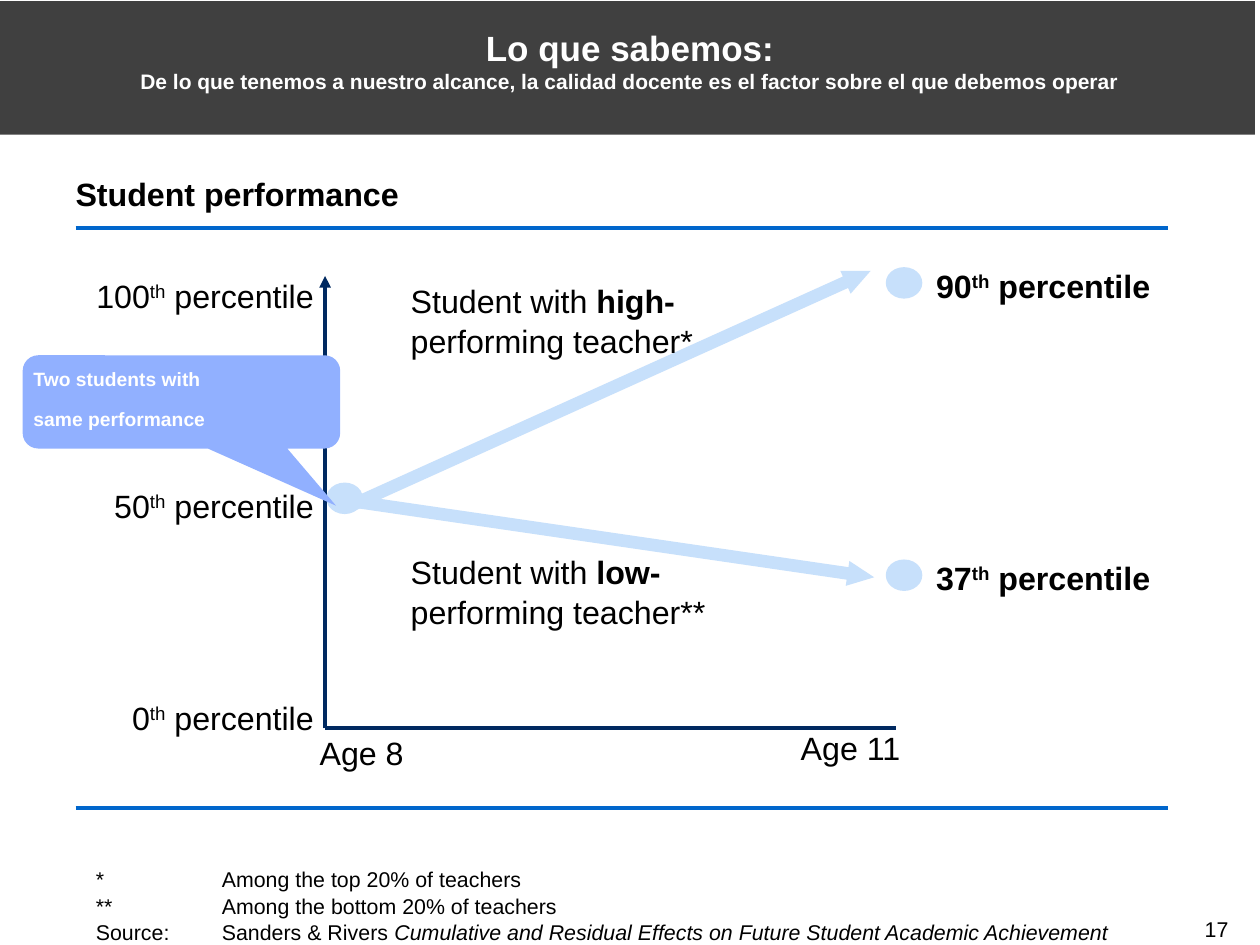
from dataclasses import dataclass

from lxml.etree import SubElement
from pptx import Presentation
from pptx.dml.color import RGBColor as RGB
from pptx.enum.shapes import MSO_CONNECTOR as CONN, MSO_SHAPE as SHAPE
from pptx.enum.text import MSO_ANCHOR as ANCHOR, MSO_AUTO_SIZE as AUTO, PP_ALIGN as ALIGN
from pptx.oxml.ns import qn
from pptx.util import Inches, Pt


@dataclass(frozen=True)
class Theme:
    font: str = "Arial"
    text: str = "000000"
    light: str = "FFFFFF"
    band: str = "404040"
    rule: str = "0066CC"
    axis: str = "002960"
    path_fill: str = "C7E0FB"
    callout: str = "91B0FF"
    title: float = 20
    subtitle: float = 12
    body: float = 18.4
    note: float = 12.2
    small: float = 11
    line: float = 2.25


@dataclass(frozen=True)
class Outcome:
    """One student's path: arrow, caption, end dot and final percentile."""
    arrow: tuple
    angle: float
    head: float
    level: str
    mark: str
    caption_y: float
    dot_y: float
    rank: str


T = Theme()
BOLD = {"bold": True}
DOT_X, DOT_W, DOT_H = 7.03, 0.29, 0.25
AXIS_X, AXIS_Y = 2.58, 5.78

OUTCOMES = [
    Outcome((2.64, 4.17, 4.32, 0.2), 8.3, 1.065, "low-", "**", 4.37, 4.44, "37"),
    Outcome((2.59, 2.98, 4.52, 0.2), 335.7, 1.096, "high-", "*", 2.22, 2.12, "90"),
]
LEVELS = [("100", 2.19), ("50", 3.86), ("0", 5.54)]
AGES = [("Age 8", 2.37, 5.82), ("Age 11", 6.25, 5.78)]


def write(tf, paras: list, size: float = T.body, color: str = T.text,
          align=ALIGN.LEFT, spacing: float = 1.0, **frame) -> None:
    """Fill a frame; each paragraph is a list of (text, font format) pairs."""
    margins = dict.fromkeys(("margin_left", "margin_top", "margin_right", "margin_bottom"), 0)
    settings = {"word_wrap": True, "auto_size": AUTO.NONE,
                "vertical_anchor": ANCHOR.TOP, **margins, **frame}
    for name, value in settings.items():
        setattr(tf, name, value)
    for i, runs in enumerate(paras):
        p = tf.paragraphs[0] if i == 0 else tf.add_paragraph()
        p.alignment, p.line_spacing = align, spacing
        for text, fmt in runs:
            r = p.add_run()
            r.text = text
            fmt = {"name": T.font, "size": Pt(size), **fmt}
            baseline = fmt.pop("baseline", None)
            for name, value in fmt.items():
                setattr(r.font, name, value)
            r.font.color.rgb = RGB.from_string(color)
            if baseline:
                r._r.get_or_add_rPr().set("baseline", str(baseline))


def add_text(s, box: tuple, paras: list, **fmt):
    tf = s.shapes.add_textbox(*map(Inches, box)).text_frame
    write(tf, paras, **fmt)
    return tf


def add_shape(s, kind, box: tuple, fill: str, adj: tuple = (), angle: float = 0):
    sp = s.shapes.add_shape(kind, *map(Inches, box))
    sp.shadow.inherit = False
    sp.fill.solid()
    sp.fill.fore_color.rgb = RGB.from_string(fill)
    sp.line.fill.background()
    sp.rotation = angle
    for i, value in enumerate(adj):
        sp.adjustments[i] = value
    return sp


def add_line(s, start: tuple, end: tuple, color: str, arrow: bool = False) -> None:
    cx = s.shapes.add_connector(CONN.STRAIGHT, *map(Inches, start + end))
    cx.line.color.rgb = RGB.from_string(color)
    cx.line.width = Pt(T.line)
    if arrow:
        SubElement(cx.line._get_or_add_ln(), qn("a:tailEnd"), type="triangle")
    SubElement(cx._element.spPr, qn("a:effectLst"))


def percentile(rank: str, **fmt) -> list:
    return [[(rank, fmt), ("th", {**fmt, "baseline": 30000}), (" percentile", fmt)]]


def add_dot(s, x: float, y: float) -> None:
    add_shape(s, SHAPE.OVAL, (x, y, DOT_W, DOT_H), T.path_fill)


def add_outcome(s, o: Outcome) -> None:
    add_shape(s, SHAPE.RIGHT_ARROW, o.arrow, T.path_fill, (0.5, o.head), o.angle)
    add_text(s, (3.26, o.caption_y, 2.6, 0.63),
             [[("Student with ", {}), (o.level, BOLD)],
              [("performing teacher" + o.mark, {})]], spacing=1.04)
    add_dot(s, DOT_X, o.dot_y)
    add_text(s, (7.43, o.dot_y - 0.01, 2, 0.32), percentile(o.rank, **BOLD))


def main() -> None:
    prs = Presentation()
    prs.slide_width, prs.slide_height = Inches(10), Inches(7.5)
    s = prs.slides.add_slide(prs.slide_layouts[5])

    # Page number and footnotes
    add_text(s, (7.67, 7.27, 2.08, 0.21), [[("17", {})]], size=T.note, align=ALIGN.RIGHT)
    notes = add_text(s, (0.12, 6.87, 9.11, 0.63), [
        [("*\tAmong the top 20% of teachers", {})],
        [("**\tAmong the bottom 20% of teachers", {})],
        [("Source:\tSanders & Rivers ", {}),
         ("Cumulative and Residual Effects on Future Student Academic Achievement",
          {"italic": True})],
    ], size=T.note, spacing=1.04, vertical_anchor=ANCHOR.BOTTOM)
    for p in notes.paragraphs:
        pPr = p._p.get_or_add_pPr()
        pPr.set("marL", str(Inches(1.64)))
        pPr.set("indent", str(Inches(-1)))

    # Chart heading and the two student paths
    add_text(s, (0.6, 1.38, 3, 0.32), [[("Student performance", BOLD)]])
    for o in OUTCOMES:
        add_outcome(s, o)
    add_dot(s, 2.59, 3.83)

    # Axes and their labels
    for rank, y in LEVELS:
        add_text(s, (0.49, y, 2, 0.32), percentile(rank), align=ALIGN.RIGHT)
    for label, x, y in AGES:
        add_text(s, (x, y, 1, 0.32), [[(label, {})]], align=ALIGN.CENTER)
    add_line(s, (AXIS_X, AXIS_Y), (AXIS_X, 2.19), T.axis, arrow=True)
    add_line(s, (AXIS_X, AXIS_Y), (7.11, AXIS_Y), T.axis)

    # Callout on the starting point
    sp = add_shape(s, SHAPE.ROUNDED_RECTANGULAR_CALLOUT, (0.18, 2.82, 2.52, 0.74),
                   T.callout, (0.487, 1.113, 0.167))
    write(sp.text_frame, [[("Two students with", BOLD)], [("same performance", BOLD)]],
          size=T.small, color=T.light, vertical_anchor=ANCHOR.MIDDLE,
          margin_left=Inches(0.05), margin_bottom=Inches(0.05))
    sp.text_frame.paragraphs[0].space_after = Pt(9.6)

    # Rules above and below the chart
    for y in (1.81, 6.41):
        add_line(s, (0.6, y), (9.27, y), T.rule)

    # Title band, with the title in front of it
    add_shape(s, SHAPE.RECTANGLE, (0, 0.01, 9.96, 1.06), T.band)
    title = s.shapes.title
    title.left, title.top, title.width, title.height = map(Inches, (0, 0.16, 10, 0.64))
    write(title.text_frame, [
        [("Lo que sabemos:", BOLD)],
        [("De lo que tenemos a nuestro alcance, la calidad docente es el factor "
          "sobre el que debemos operar", {**BOLD, "size": Pt(T.subtitle)})],
    ], size=T.title, color=T.light, align=ALIGN.CENTER,
        margin_top=Inches(0.05), margin_bottom=Inches(0.05))
    s.shapes._spTree.append(title._element)

    prs.save("out.pptx")


if __name__ == "__main__":
    main()
